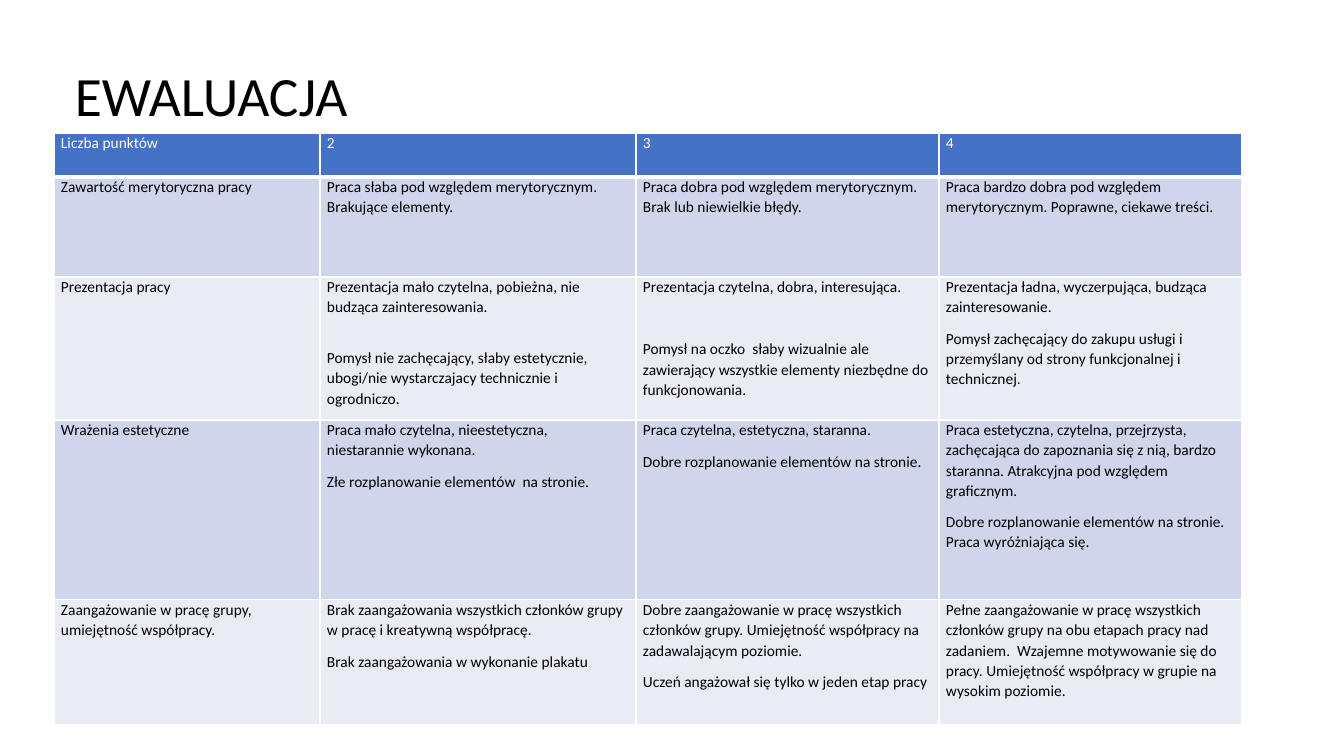
"""Build the EWALUACJA slide with its grading rubric table."""
from dataclasses import dataclass
from typing import NamedTuple

from lxml.etree import SubElement
from pptx import Presentation
from pptx.dml.color import RGBColor
from pptx.enum.text import MSO_ANCHOR as Anchor
from pptx.oxml.ns import qn
from pptx.util import Emu, Pt

EMU_PER_PX = 12192000 / 1344


@dataclass(frozen=True)
class Theme:
    font: str = "Calibri"
    ink: str = "000000"
    white: str = "FFFFFF"
    header: str = "4472C4"
    bands: tuple[str, str] = ("CFD5EA", "E9EBF5")
    title_size: float = 39.6
    cell_size: float = 11
    title_spacing: float = 0.9
    cell_spacing: float = 1.06
    gap: float = 8
    thin: float = 1
    thick: float = 3


class Note(NamedTuple):
    text: str
    after: float = 8


class Criterion(NamedTuple):
    name: str
    height: int
    grades: tuple[tuple[Note, ...], ...]


THEME = Theme()
TABLE_LEFT, TABLE_TOP = 54, 133
COLUMN_WIDTHS = (266, 316, 303, 303)

CRITERIA = (
    Criterion("Liczba punktów", 44, ((Note("2"),), (Note("3"),), (Note("4"),))),
    Criterion("Zawartość merytoryczna pracy", 100, (
        (Note("Praca słaba pod względem merytorycznym. Brakujące elementy."),),
        (Note("Praca dobra pod względem merytorycznym. Brak lub niewielkie błędy."),),
        (Note("Praca bardzo dobra pod względem merytorycznym. Poprawne, ciekawe treści."),),
    )),
    Criterion("Prezentacja pracy", 143, (
        (Note("Prezentacja mało czytelna, pobieżna, nie budząca zainteresowania.", after=22),
         Note("Pomysł nie zachęcający, słaby estetycznie, ubogi/nie wystarczajacy "
              "technicznie i ogrodniczo.")),
        (Note("Prezentacja czytelna, dobra, interesująca.", after=30),
         Note("Pomysł na oczko  słaby wizualnie ale zawierający wszystkie elementy "
              "niezbędne do funkcjonowania.")),
        (Note("Prezentacja ładna, wyczerpująca, budząca zainteresowanie."),
         Note("Pomysł zachęcający do zakupu usługi i przemyślany od strony "
              "funkcjonalnej i technicznej.")),
    )),
    Criterion("Wrażenia estetyczne", 180, (
        (Note("Praca mało czytelna, nieestetyczna, niestarannie wykonana."),
         Note("Złe rozplanowanie elementów  na stronie.")),
        (Note("Praca czytelna, estetyczna, staranna."),
         Note("Dobre rozplanowanie elementów na stronie.")),
        (Note("Praca estetyczna, czytelna, przejrzysta, zachęcająca do zapoznania się "
              "z nią, bardzo staranna. Atrakcyjna pod względem graficznym."),
         Note("Dobre rozplanowanie elementów na stronie. Praca wyróżniająca się.")),
    )),
    Criterion("Zaangażowanie w pracę grupy, umiejętność współpracy.", 125, (
        (Note("Brak zaangażowania wszystkich członków grupy w pracę i kreatywną współpracę."),
         Note("Brak zaangażowania w wykonanie plakatu")),
        (Note("Dobre zaangażowanie w pracę wszystkich członków grupy. Umiejętność "
              "współpracy na zadawalającym poziomie."),
         Note("Uczeń angażował się tylko w jeden etap pracy")),
        (Note("Pełne zaangażowanie w pracę wszystkich członków grupy na obu etapach pracy "
              "nad zadaniem.  Wzajemne motywowanie się do pracy. Umiejętność współpracy "
              "w grupie na wysokim poziomie."),),
    )),
)


def px(length: int) -> Emu:
    """Turn whole pixels into EMU."""
    return Emu(round(length * EMU_PER_PX))


def write(frame, notes: tuple[Note, ...], *, size: float, color: str, spacing: float) -> None:
    """Fill a text frame with one formatted paragraph per note."""
    frame.word_wrap = True
    for index, note in enumerate(notes):
        paragraph = frame.paragraphs[0] if index == 0 else frame.add_paragraph()
        paragraph.line_spacing = spacing
        paragraph.space_after = Pt(note.after)
        run = paragraph.add_run()
        run.text = note.text
        run.font.name = THEME.font
        run.font.size = Pt(size)
        run.font.bold = False
        run.font.color.rgb = RGBColor.from_string(color)


def draw_borders(cell, bottom: float) -> None:
    """Give a cell white borders with a chosen bottom width."""
    properties = cell._tc.get_or_add_tcPr()
    widths = {"lnL": THEME.thin, "lnR": THEME.thin, "lnT": THEME.thin, "lnB": bottom}
    for side, width in widths.items():
        line = SubElement(properties, qn(f"a:{side}"), w=str(Pt(width)))
        fill = SubElement(line, qn("a:solidFill"))
        SubElement(fill, qn("a:srgbClr"), val=THEME.white)


def draw_cell(cell, notes: tuple[Note, ...], row: int) -> None:
    """Style and fill one rubric cell."""
    is_header = row == 0
    draw_borders(cell, THEME.thick if is_header else THEME.thin)
    cell.margin_left = cell.margin_right = px(7)
    cell.margin_top = cell.margin_bottom = 0
    cell.fill.solid()
    background = THEME.header if is_header else THEME.bands[(row - 1) % 2]
    cell.fill.fore_color.rgb = RGBColor.from_string(background)
    write(cell.text_frame, notes, size=THEME.cell_size,
          color=THEME.white if is_header else THEME.ink, spacing=THEME.cell_spacing)


def draw_rubric(slide) -> None:
    """Add the rubric table."""
    rubric = slide.shapes.add_table(
        len(CRITERIA), len(COLUMN_WIDTHS), px(TABLE_LEFT), px(TABLE_TOP),
        px(sum(COLUMN_WIDTHS)), px(sum(criterion.height for criterion in CRITERIA))).table
    rubric.horz_banding = False
    for column, width in zip(rubric.columns, COLUMN_WIDTHS):
        column.width = px(width)
    for row, criterion in enumerate(CRITERIA):
        rubric.rows[row].height = px(criterion.height)
        for column, notes in enumerate(((Note(criterion.name),), *criterion.grades)):
            draw_cell(rubric.cell(row, column), notes, row)


def draw_heading(slide) -> None:
    """Add the slide heading."""
    heading = slide.shapes.add_textbox(px(65), px(78), px(1216), px(42)).text_frame
    heading.vertical_anchor = Anchor.MIDDLE
    write(heading, (Note("EWALUACJA", after=0),), size=THEME.title_size,
          color=THEME.ink, spacing=THEME.title_spacing)


def main() -> None:
    """Build and save the presentation."""
    presentation = Presentation()
    presentation.slide_width, presentation.slide_height = px(1344), px(756)
    slide = presentation.slides.add_slide(presentation.slide_layouts[6])
    draw_heading(slide)
    draw_rubric(slide)
    presentation.save("out.pptx")


if __name__ == "__main__":
    main()
